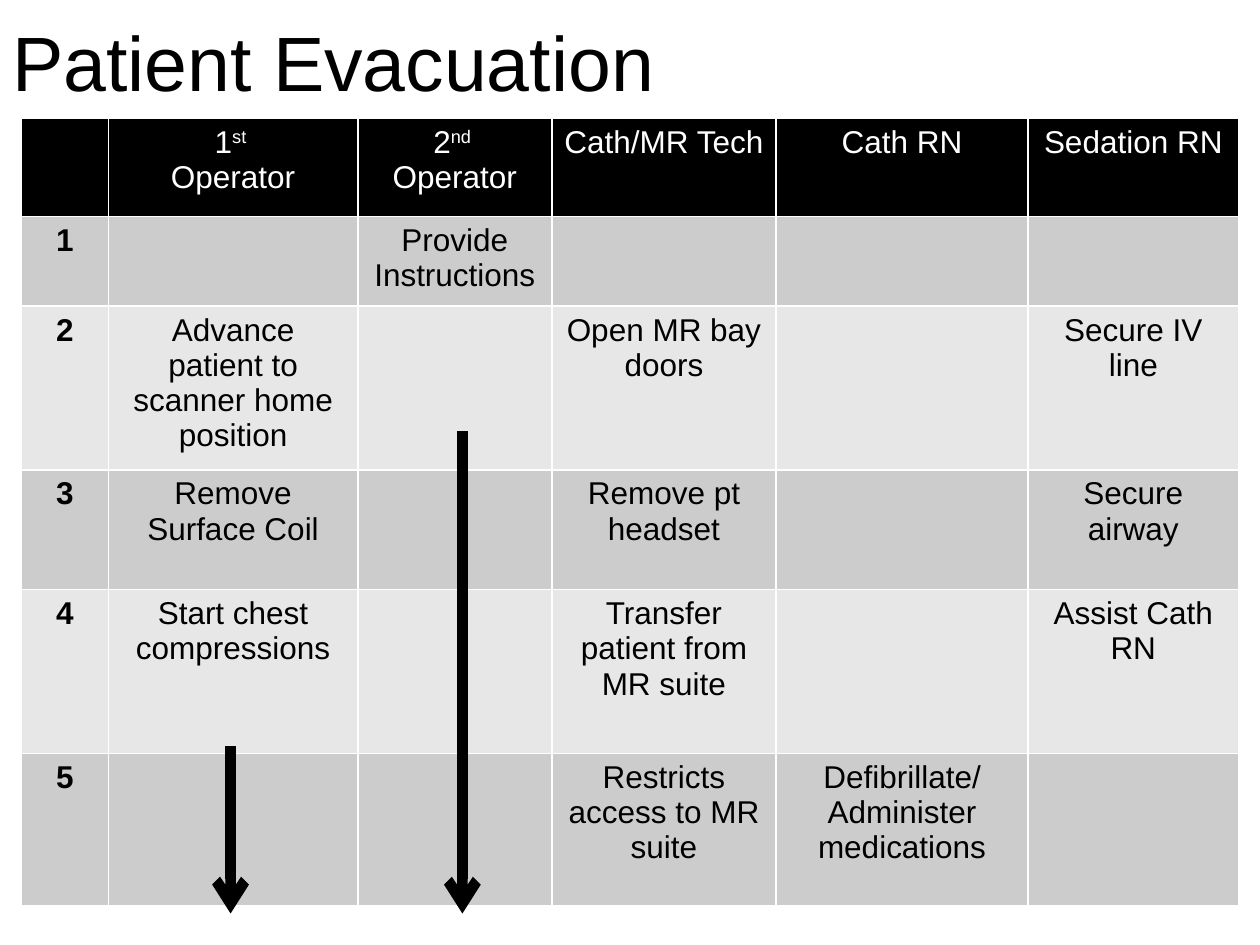
from lxml.etree import SubElement as Sub
from pptx import Presentation
from pptx.dml.color import RGBColor as Rgb
from pptx.enum.shapes import MSO_CONNECTOR as Link
from pptx.enum.text import MSO_ANCHOR as Anchor, PP_ALIGN as Align
from pptx.oxml.ns import qn
from pptx.util import Inches, Pt

INK = {"black": "000000", "white": "FFFFFF", "dark": "CCCCCC", "light": "E7E7E7"}
FONT = "Arial"
COLS = [0.69, 1.98, 1.54, 1.78, 2, 1.67]
ROWS = [0.78, 0.71, 1.22, 0.95, 1.3, 1.21]
LEFT, TOP = 0.17, 0.94

# A cell is a list of paragraphs; a paragraph is a list of runs.
# A run that starts with "^" is raised.
HEAD = [
    [],
    [["1", "^st "], ["Operator"]],
    [["2", "^nd "], ["Operator"]],
    [["Cath/MR Tech"]],
    [["Cath RN"]],
    [["Sedation RN"]],
]
STEPS = [
    ["", "Provide Instructions", "", "", ""],
    ["Advance patient to scanner home position", "", "Open MR bay doors",
     "", "Secure IV line"],
    ["Remove Surface Coil", "", "Remove pt headset", "", "Secure airway"],
    ["Start chest compressions", "", "Transfer patient from MR suite",
     "", "Assist Cath RN"],
    ["", "", "Restricts access to MR suite",
     "Defibrillate/ Administer medications", ""],
]


def rgb(name):
    return Rgb.from_string(INK[name])


def style(font, size, ink, bold=False):
    font.name, font.size, font.bold = FONT, Pt(size), bold
    font.color.rgb = rgb(ink)


def add_run(para, text, size, ink, bold=False):
    run = para.add_run()
    run.text = text.lstrip("^")
    style(run.font, size, ink, bold)
    if text.startswith("^"):
        run.font._element.set("baseline", "30000")


def add_title(slide, text):
    box = slide.shapes.add_textbox(0, Inches(0.02), Inches(10), Inches(0.92))
    frame = box.text_frame
    frame.word_wrap = True
    frame.vertical_anchor = Anchor.MIDDLE
    add_run(frame.paragraphs[0], text, 44, "black")


def fill_cell(cell, paras, back, ink, bold=False):
    cell.fill.solid()
    cell.fill.fore_color.rgb = rgb(back)
    frame = cell.text_frame
    for i, runs in enumerate(paras):
        para = frame.add_paragraph() if i else frame.paragraphs[0]
        para.alignment = Align.CENTER
        for text in runs:
            add_run(para, text, 18, ink, bold)


def add_grid(slide):
    """Add the table; its default style draws the white rules."""
    area = [Inches(n) for n in (LEFT, TOP, sum(COLS), sum(ROWS))]
    table = slide.shapes.add_table(len(ROWS), len(COLS), *area).table
    for col, width in zip(table.columns, COLS):
        col.width = Inches(width)
    for row, height in zip(table.rows, ROWS):
        row.height = Inches(height)
    for c, paras in enumerate(HEAD):
        fill_cell(table.cell(0, c), paras, "black", "white")
    for r, tasks in enumerate(STEPS, 1):
        back = "dark" if r % 2 else "light"
        for c, text in enumerate([str(r)] + tasks):
            paras = [[text]] if text else []
            fill_cell(table.cell(r, c), paras, back, "black", c == 0)


def add_arrow(slide, x, top, end):
    ends = [Inches(n) for n in (x, top, x, end)]
    arrow = slide.shapes.add_connector(Link.STRAIGHT, *ends)
    arrow.line.color.rgb = rgb("black")
    arrow.line.width = Pt(6)
    Sub(arrow.line._get_or_add_ln(), qn("a:tailEnd"), type="arrow")
    Sub(arrow._element.spPr, qn("a:effectLst"))


def main():
    deck = Presentation()
    deck.slide_width, deck.slide_height = Inches(10), Inches(7.5)
    slide = deck.slides.add_slide(deck.slide_layouts[6])
    add_title(slide, "Patient Evacuation")
    add_grid(slide)
    for x, top in [(3.67, 3.42), (1.83, 5.92)]:
        add_arrow(slide, x, top, 7.25)
    deck.save("out.pptx")


if __name__ == "__main__":
    main()
